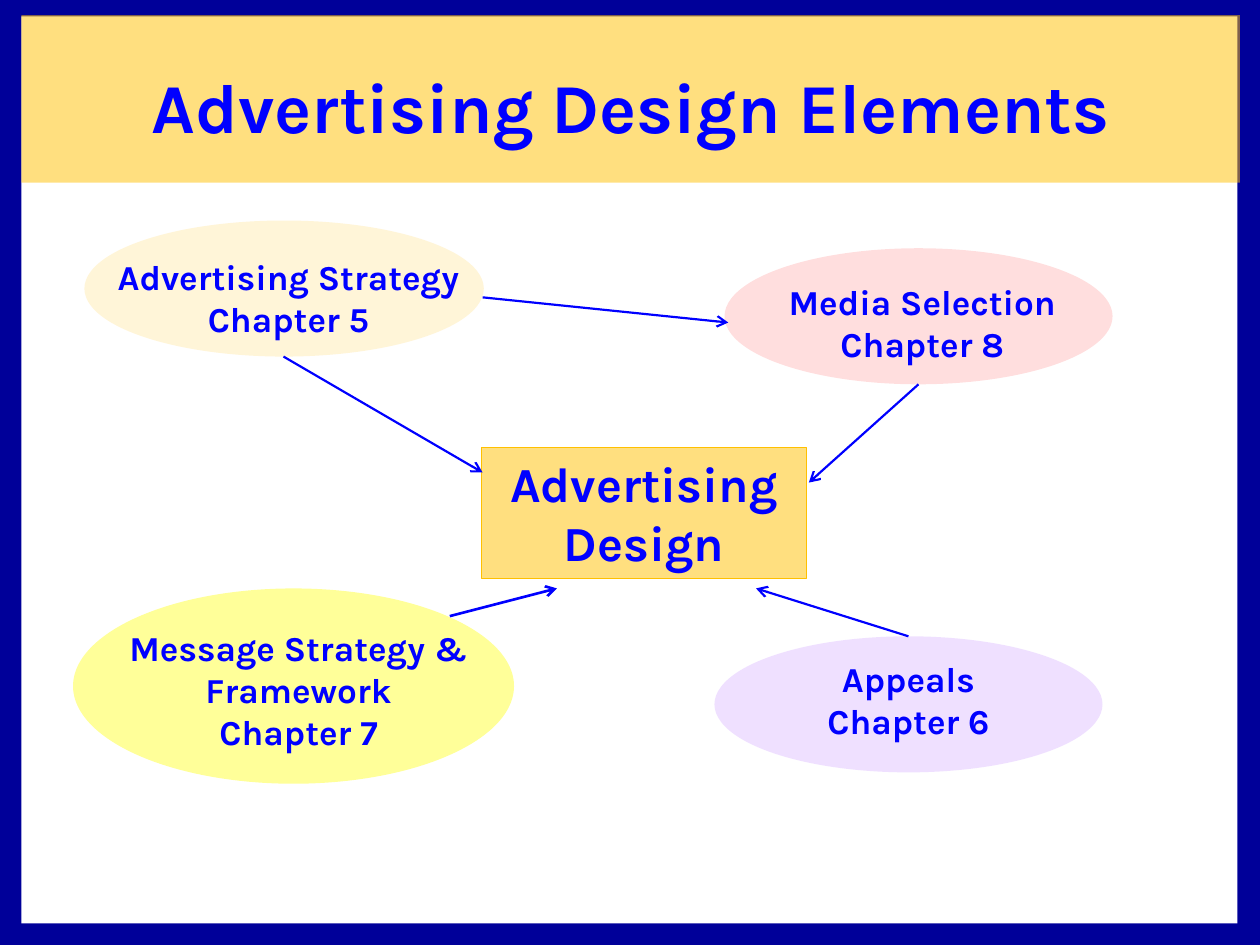
from dataclasses import dataclass

from lxml import etree
from pptx import Presentation
from pptx.dml.color import RGBColor
from pptx.enum import shapes, text
from pptx.oxml.ns import qn
from pptx.util import Inches, Pt


@dataclass(frozen=True)
class Theme:
    font: str = "Karla"
    ink: str = "0000FF"
    frame: str = "000099"
    paper: str = "FFFFFF"
    accent: str = "FFC000"
    accent_opacity: int = 50
    title_size: int = 40
    centre_size: int = 28
    label_size: int = 20


@dataclass(frozen=True)
class Box:
    left: float
    top: float
    width: float
    height: float

    def lengths(self) -> list:
        return [Inches(n) for n in (self.left, self.top, self.width, self.height)]


@dataclass(frozen=True)
class Topic:
    lines: tuple[str, ...]
    ellipse: Box
    label: Box
    color: str
    opacity: int = 100


@dataclass(frozen=True)
class Arrow:
    start: tuple[float, float]
    end: tuple[float, float]
    weight: float = 1.25


THEME = Theme()
RECTANGLE = shapes.MSO_SHAPE.RECTANGLE
OVAL = shapes.MSO_SHAPE.OVAL

TOPICS = (
    Topic(("Appeals", "Chapter 6"),
          Box(5.67, 5.05, 3.08, 1.08), Box(5.67, 5.17, 3.08, 0.77), "9933FF", 15),
    Topic(("Advertising Strategy", "Chapter 5"),
          Box(0.67, 1.75, 3.17, 1.08), Box(0.75, 1.98, 3.08, 0.77), "FFD966", 25),
    Topic(("Media Selection", "Chapter 8"),
          Box(5.75, 1.97, 3.08, 1.08), Box(5.78, 2.18, 3.08, 0.77), "FF0000", 13),
    Topic(("Message Strategy & Framework", "Chapter 7"),
          Box(0.58, 4.67, 3.5, 1.55), Box(0.83, 4.92, 3.08, 1.11), "FFFF99"),
)

ARROWS = (
    Arrow((3.83, 2.36), (5.78, 2.56)),
    Arrow((7.21, 5.05), (6, 4.67)),
    Arrow((2.25, 2.83), (3.83, 3.75)),
    Arrow((7.29, 3.05), (6.42, 3.83)),
    Arrow((3.57, 4.89), (4.42, 4.67), 1.5),
)


def add_filled_shape(slide, kind, box: Box, color: str, opacity: int = 100):
    """Add a shadowless, unlined shape; opacity is a percentage."""
    shape = slide.shapes.add_shape(kind, *box.lengths())
    shape.shadow.inherit = False
    shape.line.fill.background()
    shape.fill.solid()
    shape.fill.fore_color.rgb = RGBColor.from_string(color)
    if opacity < 100:
        color_element = shape.fill._xPr.find(qn("a:solidFill"))[0]
        etree.SubElement(color_element, qn("a:alpha"), val=str(opacity * 1000))
    return shape


def write_lines(shape, lines: tuple[str, ...], size: int,
                anchor=text.MSO_ANCHOR.TOP) -> None:
    frame = shape.text_frame
    frame.word_wrap = True
    frame.vertical_anchor = anchor
    for index, line in enumerate(lines):
        paragraph = frame.add_paragraph() if index else frame.paragraphs[0]
        paragraph.alignment = text.PP_ALIGN.CENTER
        run = paragraph.add_run()
        run.text = line
        run.font.name = THEME.font
        run.font.size = Pt(size)
        run.font.bold = True
        run.font.color.rgb = RGBColor.from_string(THEME.ink)


def add_label(slide, box: Box, lines: tuple[str, ...], size: int,
              anchor=text.MSO_ANCHOR.TOP) -> None:
    write_lines(slide.shapes.add_textbox(*box.lengths()), lines, size, anchor)


def add_arrow(slide, arrow: Arrow) -> None:
    points = [Inches(n) for n in (*arrow.start, *arrow.end)]
    connector = slide.shapes.add_connector(shapes.MSO_CONNECTOR.STRAIGHT, *points)
    connector.line.color.rgb = RGBColor.from_string(THEME.ink)
    connector.line.width = Pt(arrow.weight)
    etree.SubElement(connector.line._get_or_add_ln(), qn("a:tailEnd"), type="arrow")
    etree.SubElement(connector._element.spPr, qn("a:effectLst"))


def main() -> None:
    presentation = Presentation()
    presentation.slide_width, presentation.slide_height = Inches(10), Inches(7.5)
    slide = presentation.slides.add_slide(presentation.slide_layouts[6])

    add_filled_shape(slide, RECTANGLE, Box(0, 0, 10, 7.5), THEME.frame)
    add_filled_shape(slide, RECTANGLE, Box(0.17, 0.13, 9.65, 7.2), THEME.paper)
    for topic in TOPICS:
        add_filled_shape(slide, OVAL, topic.ellipse, topic.color, topic.opacity)
    add_filled_shape(slide, RECTANGLE, Box(0.17, 0.12, 9.67, 1.33),
                     THEME.accent, THEME.accent_opacity)

    centre = add_filled_shape(slide, RECTANGLE, Box(3.82, 3.55, 2.58, 1.04),
                              THEME.accent, THEME.accent_opacity)
    centre.line.color.rgb = RGBColor.from_string(THEME.accent)
    centre.line.width = Pt(0.75)
    write_lines(centre, ("Advertising", "Design"), THEME.centre_size)

    for topic in TOPICS:
        add_label(slide, topic.label, topic.lines, THEME.label_size)
    for arrow in ARROWS:
        add_arrow(slide, arrow)
    add_label(slide, Box(0.33, 0.25, 9.35, 1.17), ("Advertising Design Elements",),
              THEME.title_size, text.MSO_ANCHOR.MIDDLE)

    presentation.save("out.pptx")


if __name__ == "__main__":
    main()
